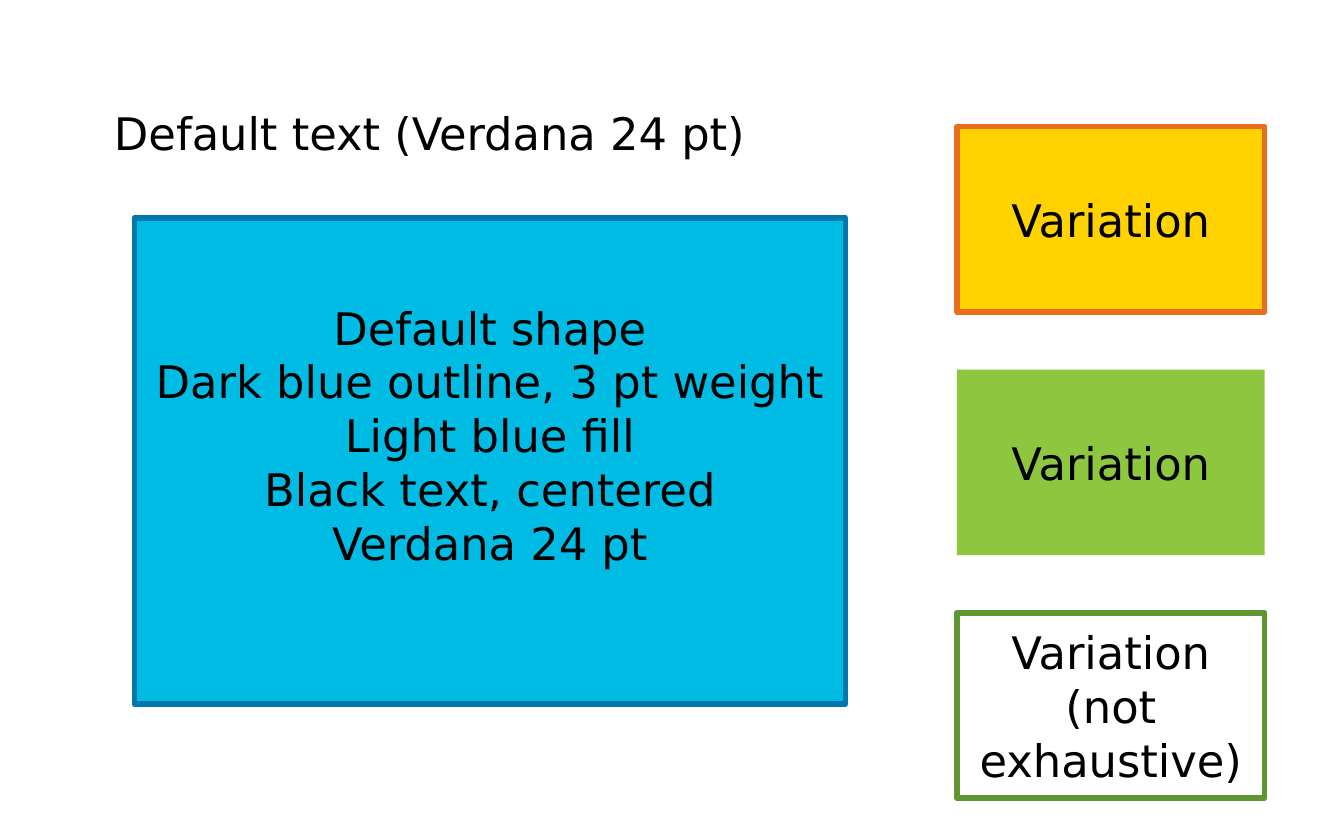
from pptx import Presentation
from pptx.dml.color import RGBColor
from pptx.enum.shapes import MSO_SHAPE
from pptx.enum.text import MSO_ANCHOR, MSO_AUTO_SIZE, PP_ALIGN
from pptx.util import Inches, Pt

RECTANGLE = MSO_SHAPE.RECTANGLE
MIDDLE = MSO_ANCHOR.MIDDLE
GROW = MSO_AUTO_SIZE.SHAPE_TO_FIT_TEXT
LEFT, CENTER = PP_ALIGN.LEFT, PP_ALIGN.CENTER

SLIDE_WIDTH, SLIDE_HEIGHT = 10, 6.25
FONT_FORMAT = {"name": "DejaVu Sans", "size": Pt(24)}
BLACK = "000000"
OUTLINE_WEIGHT = 3

VARIATION_LEFT, VARIATION_TOP = 7.12, 0.94
VARIATION_WIDTH, VARIATION_HEIGHT = 2.29, 1.38
VARIATION_STEP = 1.81

DEFAULT_LINES = [
    "Default shape",
    "Dark blue outline, 3 pt weight",
    "Light blue fill",
    "Black text, centered",
    "Verdana 24 pt",
]
VARIATIONS = [
    (["Variation"], "FFD200", "E86D1F"),
    (["Variation"], "8DC63F", None),
    (["Variation", "(not exhaustive)"], None, "5E9732"),
]


def color(hex_string):
    return RGBColor.from_string(hex_string)


def set_attributes(target, values):
    for name, value in values.items():
        setattr(target, name, value)


def write_lines(text_frame, lines, alignment):
    text_frame.text = "\n".join(lines)
    for paragraph in text_frame.paragraphs:
        paragraph.alignment = alignment
        for run in paragraph.runs:
            set_attributes(run.font, FONT_FORMAT)
            run.font.color.rgb = color(BLACK)


def add_label(slide, box, text):
    label = slide.shapes.add_textbox(*map(Inches, box))
    write_lines(label.text_frame, [text], LEFT)
    set_attributes(label.text_frame, {"word_wrap": False, "auto_size": GROW})


def add_box(slide, box, lines, fill, outline, bottom_margin=0.05):
    shape = slide.shapes.add_shape(RECTANGLE, *map(Inches, box))
    shape.shadow.inherit = False
    if fill:
        shape.fill.solid()
        shape.fill.fore_color.rgb = color(fill)
    else:
        shape.fill.background()
    if outline:
        shape.line.color.rgb = color(outline)
        shape.line.width = Pt(OUTLINE_WEIGHT)
    else:
        shape.line.fill.background()
    write_lines(shape.text_frame, lines, CENTER)
    set_attributes(shape.text_frame, {
        "word_wrap": True,
        "vertical_anchor": MIDDLE,
        "margin_bottom": Inches(bottom_margin),
    })


def add_variations(slide):
    for row, (lines, fill, outline) in enumerate(VARIATIONS):
        top = VARIATION_TOP + row * VARIATION_STEP
        box = (VARIATION_LEFT, top, VARIATION_WIDTH, VARIATION_HEIGHT)
        add_box(slide, box, lines, fill, outline)


def main():
    presentation = Presentation()
    presentation.slide_width = Inches(SLIDE_WIDTH)
    presentation.slide_height = Inches(SLIDE_HEIGHT)
    slide = presentation.slides.add_slide(presentation.slide_layouts[6])
    add_label(slide, (0.75, 0.74, 5.03, 0.5), "Default text (Verdana 24 pt)")
    add_box(slide, (1, 1.62, 5.29, 3.62), DEFAULT_LINES, "00BCE4", "0078AE",
            bottom_margin=0.44)
    add_variations(slide)
    presentation.save("out.pptx")


if __name__ == "__main__":
    main()
